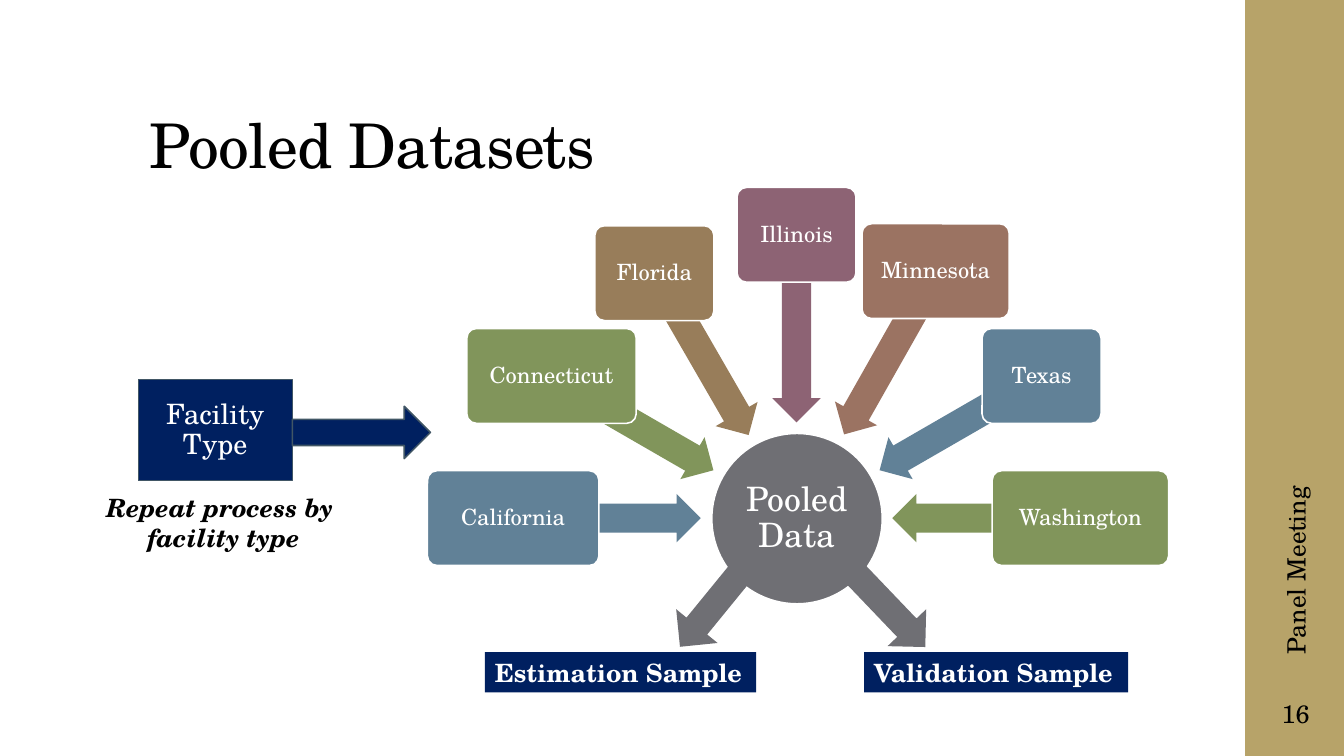
from dataclasses import dataclass
from math import cos, radians, sin

from pptx import Presentation
from pptx.dml.color import RGBColor
from pptx.enum.shapes import MSO_SHAPE
from pptx.enum.text import MSO_ANCHOR, PP_ALIGN
from pptx.util import Pt

PX = 9144


@dataclass(frozen=True)
class Theme:
    font: str = "TeX Gyre Schola"
    black: str = "000000"
    white: str = "FFFFFF"
    gold: str = "B7A369"
    navy: str = "002060"
    outline: str = "415665"
    gray: str = "6F6F74"
    blue: str = "618197"
    green: str = "81955B"
    tan: str = "987D5A"
    plum: str = "8D6374"
    rust: str = "9B7362"
    title_size: int = 44
    hub_size: int = 24
    facility_size: int = 20
    body_size: int = 18
    state_size: int = 16


THEME = Theme()
HUB_CENTER = (790, 514)
HUB_DIAMETER = 169
ARROW_RADIUS = 188
CARD_RADIUS = 281
ARROW_SIZE = (186, 48)
CARD_HEIGHT = 94

STATES = [
    ("California", 180, 170, THEME.blue),
    ("Connecticut", 210, 168, THEME.green),
    ("Florida", 240, 118, THEME.tan),
    ("Illinois", 270, 118, THEME.plum),
    ("Minnesota", 299.5, 146, THEME.rust),
    ("Texas", 330, 118, THEME.blue),
    ("Washington", 0, 175, THEME.green),
]


def scaled(*lengths):
    return [round(length * PX) for length in lengths]


def around(center, width, height):
    return (round(center[0] - width / 2), round(center[1] - height / 2), width, height)


def on_circle(radius, angle):
    turn = radians(angle)
    return HUB_CENTER[0] + radius * cos(turn), HUB_CENTER[1] + radius * sin(turn)


def write(box, text, size, color, align=PP_ALIGN.CENTER, anchor=MSO_ANCHOR.MIDDLE,
          bold=False, italic=False, spacing=1.0, inset=None, wrap=True):
    frame = box.text_frame
    frame.text = text
    frame.word_wrap = wrap
    frame.vertical_anchor = anchor
    if inset is not None:
        frame.margin_left = frame.margin_right = inset * PX
        frame.margin_top = frame.margin_bottom = inset * PX
    for para in frame.paragraphs:
        para.alignment = align
        para.line_spacing = spacing
        for span in para.runs:
            span.font.name = THEME.font
            span.font.size = Pt(size)
            span.font.bold = bold
            span.font.italic = italic
            span.font.color.rgb = RGBColor.from_string(color)


def add_block(page, kind, place, fill, line=None, line_width=1.1, rotation=0, adjust=()):
    shape = page.shapes.add_shape(kind, *scaled(*place))
    shape.shadow.inherit = False
    shape.rotation = rotation
    shape.fill.solid()
    shape.fill.fore_color.rgb = RGBColor.from_string(fill)
    if line:
        shape.line.color.rgb = RGBColor.from_string(line)
        shape.line.width = Pt(line_width)
    else:
        shape.line.fill.background()
    for index, value in enumerate(adjust):
        shape.adjustments[index] = value
    return shape


def add_label(page, place, text, rotation=0, **style):
    box = page.shapes.add_textbox(*scaled(*place))
    box.rotation = rotation
    write(box, text, THEME.body_size, THEME.black, **style)


def add_title(page, text):
    title = page.shapes.title
    title.left, title.top, title.width, title.height = scaled(138, 40, 1060, 145)
    write(title, text, THEME.title_size, THEME.black, align=PP_ALIGN.LEFT,
          anchor=MSO_ANCHOR.BOTTOM, spacing=0.9)
    for span in title.text_frame.paragraphs[0].runs:
        span.font._element.set("spc", "-50")


def add_sidebar(page):
    add_block(page, MSO_SHAPE.RECTANGLE, (1235, 0, 100, 750), THEME.gold)
    add_label(page, (1089, 443, 392, 40), "Panel Meeting", rotation=270, align=PP_ALIGN.LEFT)
    add_label(page, (1235, 675, 100, 65), "16", inset=5)


def add_hub(page):
    hub = add_block(page, MSO_SHAPE.OVAL, around(HUB_CENTER, HUB_DIAMETER, HUB_DIAMETER),
                    THEME.gray, THEME.white)
    write(hub, "Pooled Data", THEME.hub_size, THEME.white, spacing=0.9, inset=2)


def add_state(page, name, angle, width, color):
    add_block(page, MSO_SHAPE.LEFT_ARROW, around(on_circle(ARROW_RADIUS, angle), *ARROW_SIZE),
              color, rotation=angle, adjust=(0.6, 0.5))
    card = add_block(page, MSO_SHAPE.ROUNDED_RECTANGLE,
                     around(on_circle(CARD_RADIUS, angle), width, CARD_HEIGHT),
                     color, THEME.white, adjust=(0.1,))
    write(card, name, THEME.state_size, THEME.white, spacing=0.9, inset=3)


def add_sample(page, text, place, arrow_place, rotation):
    add_block(page, MSO_SHAPE.DOWN_ARROW, arrow_place, THEME.gray, rotation=rotation)
    sample = add_block(page, MSO_SHAPE.RECTANGLE, place, THEME.navy)
    write(sample, text, THEME.body_size, THEME.white, align=PP_ALIGN.LEFT,
          anchor=MSO_ANCHOR.TOP, bold=True, wrap=False)


def add_facility(page):
    facility = add_block(page, MSO_SHAPE.RECTANGLE, (137, 377, 153, 100),
                         THEME.navy, THEME.outline, 0.75)
    write(facility, "Facility Type", THEME.facility_size, THEME.white, spacing=0.9, inset=4)
    add_block(page, MSO_SHAPE.RIGHT_ARROW, (290, 403, 137, 52), THEME.navy, THEME.outline)
    add_label(page, (94, 483, 255, 71), "Repeat process by \nfacility type",
              anchor=MSO_ANCHOR.TOP, bold=True, italic=True, wrap=False)


def main():
    deck = Presentation()
    deck.slide_width, deck.slide_height = scaled(1333, 750)
    page = deck.slides.add_slide(deck.slide_layouts[5])
    add_sidebar(page)
    add_title(page, "Pooled Datasets")
    add_hub(page)
    for state in STATES:
        add_state(page, *state)
    add_facility(page)
    add_sample(page, "Estimation Sample", (481, 647, 269, 40), (677, 560, 53, 92), 39.2)
    add_sample(page, "Validation Sample", (857, 647, 262, 40), (856, 554, 53, 102), 316.3)
    deck.save("out.pptx")


if __name__ == "__main__":
    main()
